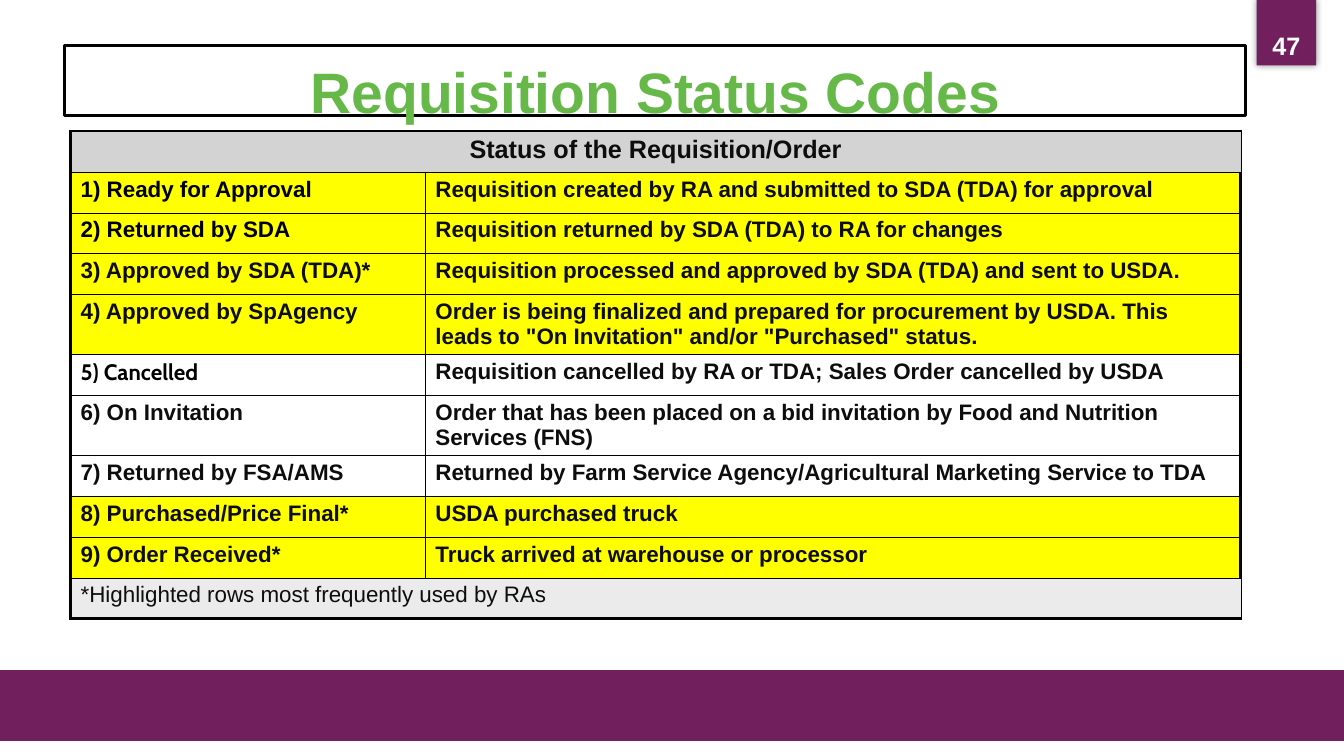
"""Build the slide of requisition status codes."""
from dataclasses import dataclass

from lxml.etree import SubElement as Sub
from pptx import Presentation
from pptx.dml.color import RGBColor as Rgb
from pptx.enum.shapes import MSO_SHAPE as Kind
from pptx.enum.text import MSO_ANCHOR as Anchor, PP_ALIGN as Align
from pptx.oxml.ns import qn
from pptx.util import Cm, Pt

TITLE = "Requisition Status Codes"
PAGE = "47"
HEAD = "Status of the Requisition/Order"
NOTE = "*Highlighted rows most frequently used by RAs"
CODES = [
    ("1) Ready for Approval", "Requisition created by RA and submitted to SDA (TDA) for approval"),
    ("2) Returned by SDA", "Requisition returned by SDA (TDA) to RA for changes"),
    ("3) Approved by SDA (TDA)*", "Requisition processed and approved by SDA (TDA) and sent to USDA."),
    ("4) Approved by SpAgency", "Order is being finalized and prepared for procurement by USDA. "
     "This leads to \"On Invitation\" and/or \"Purchased\" status."),
    ("5) Cancelled", "Requisition cancelled by RA or TDA; Sales Order cancelled by USDA"),
    ("6) On Invitation", "Order that has been placed on a bid invitation by Food and Nutrition Services (FNS)"),
    ("7) Returned by FSA/AMS", "Returned by Farm Service Agency/Agricultural Marketing Service to TDA"),
    ("8) Purchased/Price Final*", "USDA purchased truck"),
    ("9) Order Received*", "Truck arrived at warehouse or processor"),
]
PLAIN = {5, 6, 7}
BLACK = {1, 2, 5}
CABIN = {5}


@dataclass(frozen=True)
class Theme:
    """Colours, fonts and sizes."""
    plum: str = "721F5D"
    green: str = "66B948"
    black: str = "000000"
    ink: str = "0D0D0D"
    white: str = "FFFFFF"
    gold: str = "FFFF00"
    grey: str = "D3D3D3"
    pale: str = "EBEBEB"
    font: str = "Arial"
    alt: str = "Cabin"
    title: float = 40.7
    head: float = 18
    body: float = 16
    thick: float = 2.25
    thin: float = 0.25


LOOK = Theme()


def write(frame, text, size, tint, bold=True, align=Align.LEFT, font=LOOK.font):
    """Write one run in the first paragraph."""
    para = frame.paragraphs[0]
    para.alignment = align
    run = para.add_run()
    run.text = text
    run.font.size, run.font.bold, run.font.name = Pt(size), bold, font
    run.font.color.rgb = Rgb.from_string(tint)


def box(slide, spot, fill=None, line=None):
    """Add a rectangle, filled or outlined."""
    shape = slide.shapes.add_shape(Kind.RECTANGLE, *map(Cm, spot))
    shape.shadow.inherit = False
    if fill:
        shape.fill.solid()
        shape.fill.fore_color.rgb = Rgb.from_string(fill)
    else:
        shape.fill.background()
    if line:
        shape.line.color.rgb = Rgb.from_string(line)
        shape.line.width = Pt(LOOK.thick)
    else:
        shape.line.fill.background()
    return shape


def glow(shape):
    """Give a shape a soft dark shadow."""
    fx = shape._element.spPr.find(qn("a:effectLst"))
    shade = Sub(fx, qn("a:outerShdw"), blurRad=str(Pt(5)), dist="0", dir="0")
    tint = Sub(shade, qn("a:srgbClr"), val=LOOK.black)
    Sub(tint, qn("a:alpha"), val="40000")


def paint(cell, fill, thick):
    """Rule the four sides of a cell, then fill it."""
    prop = cell._tc.get_or_add_tcPr()
    for side in "LRTB":
        width = LOOK.thick if side in thick else LOOK.thin
        line = Sub(prop, qn("a:ln" + side), w=str(Pt(width)))
        Sub(Sub(line, qn("a:solidFill")), qn("a:srgbClr"), val=LOOK.black)
    cell.fill.solid()
    cell.fill.fore_color.rgb = Rgb.from_string(fill)


def chart_codes(slide):
    """Add the table of codes."""
    last = len(CODES) + 1
    cols, high = (8.94, 20.55), 1.03
    spot = (1.78, 3.3, sum(cols), high * (last + 1))
    grid = slide.shapes.add_table(last + 1, 2, *map(Cm, spot)).table
    grid.first_row = grid.horz_banding = False
    for col, wide in zip(grid.columns, cols):
        col.width = Cm(wide)
    for r, row in enumerate(grid.rows):
        row.height = Cm(high)
        fill = {0: LOOK.grey, last: LOOK.pale}.get(r, LOOK.white if r in PLAIN else LOOK.gold)
        edge = {0: "T", last: "B"}.get(r, "")
        for cell, side in zip(row.cells, "LR"):
            paint(cell, fill, edge + side)
    for r in (0, last):
        grid.cell(r, 0).merge(grid.cell(r, 1))
    write(grid.cell(0, 0).text_frame, HEAD, LOOK.head, LOOK.ink, align=Align.CENTER)
    write(grid.cell(last, 0).text_frame, NOTE, LOOK.body, LOOK.ink, bold=False)
    for r, (code, text) in enumerate(CODES, 1):
        tint = LOOK.black if r in BLACK else LOOK.ink
        font = LOOK.alt if r in CABIN else LOOK.font
        write(grid.cell(r, 0).text_frame, code, LOOK.body, tint, font=font)
        write(grid.cell(r, 1).text_frame, text, LOOK.body, LOOK.ink)


def main():
    """Build and save the deck."""
    deck = Presentation()
    deck.slide_width, deck.slide_height = Cm(33.87), Cm(19.05)
    slide = deck.slides.add_slide(deck.slide_layouts[6])

    name = box(slide, (1.63, 1.14, 29.77, 1.78), line=LOOK.black).text_frame
    name.word_wrap = True
    name.vertical_anchor = Anchor.TOP
    name.margin_top, name.margin_bottom = Cm(0.28), Cm(0)
    write(name, TITLE, LOOK.title, LOOK.green, align=Align.CENTER)

    box(slide, (0, 16.89, 33.87, 1.78), LOOK.plum)
    chart_codes(slide)

    tab = box(slide, (31.67, 0, 1.5, 1.65), LOOK.plum)
    glow(tab)
    tab.text_frame.vertical_anchor = Anchor.BOTTOM
    write(tab.text_frame, PAGE, LOOK.head, LOOK.white, align=Align.CENTER)
    deck.save("out.pptx")


if __name__ == "__main__":
    main()
